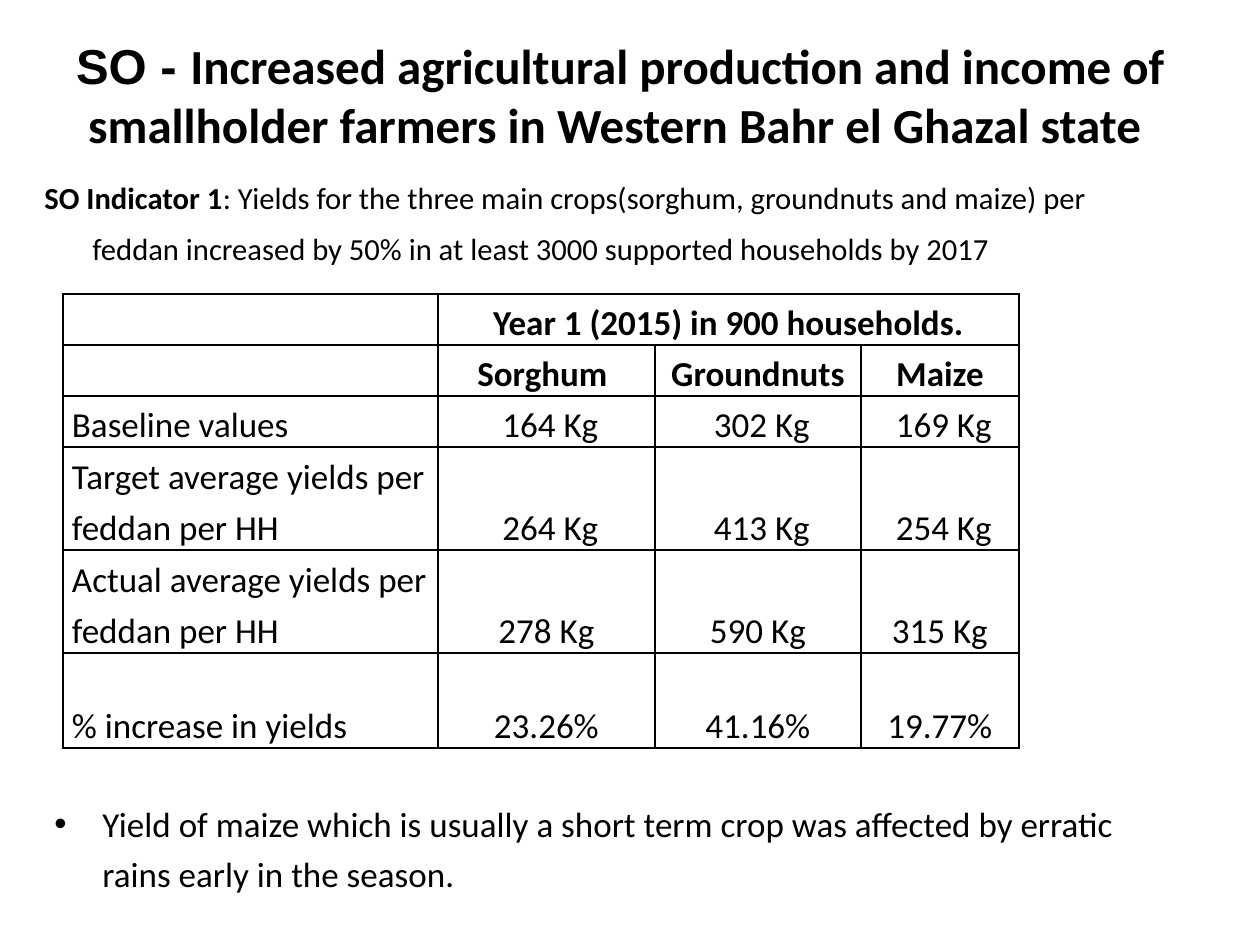
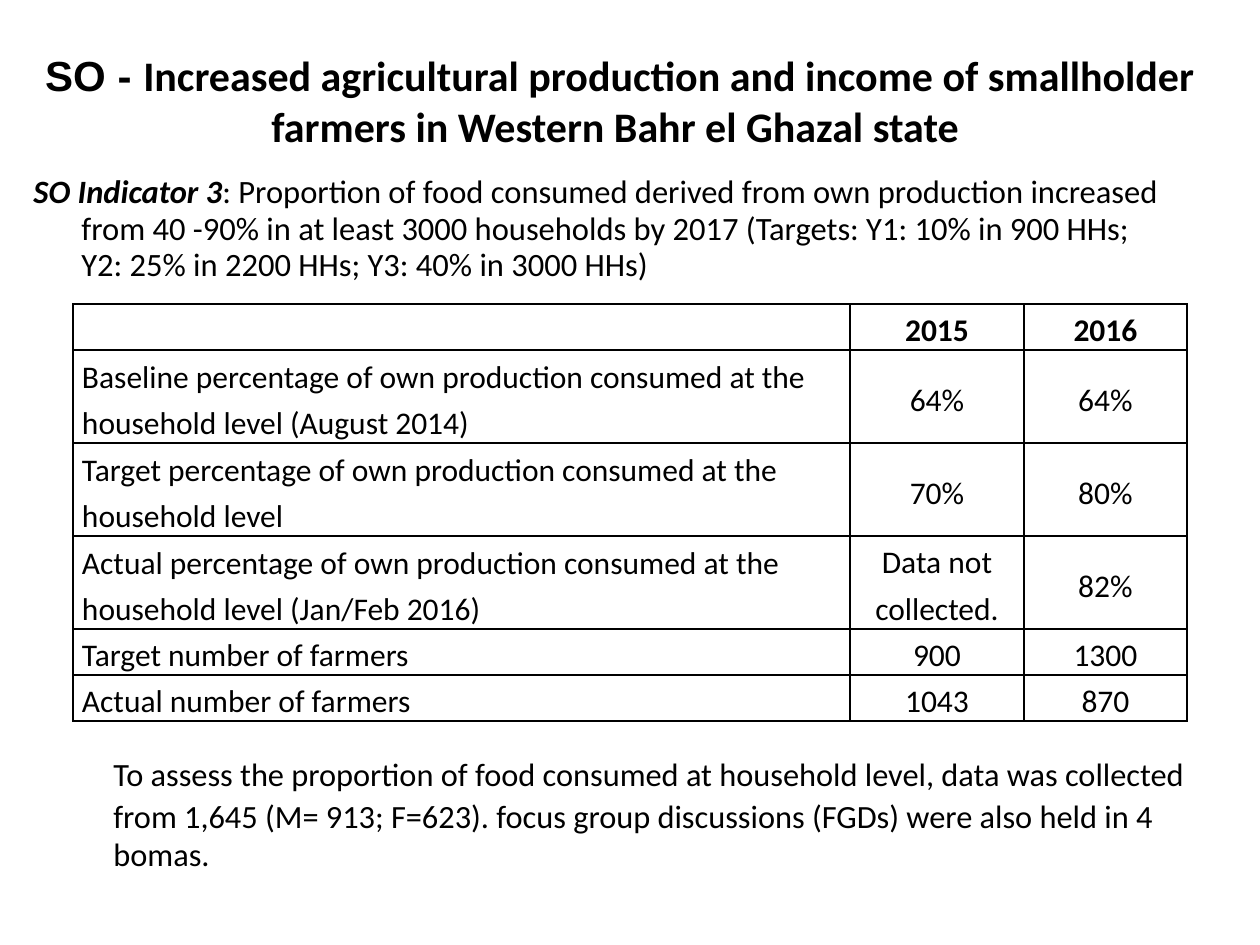
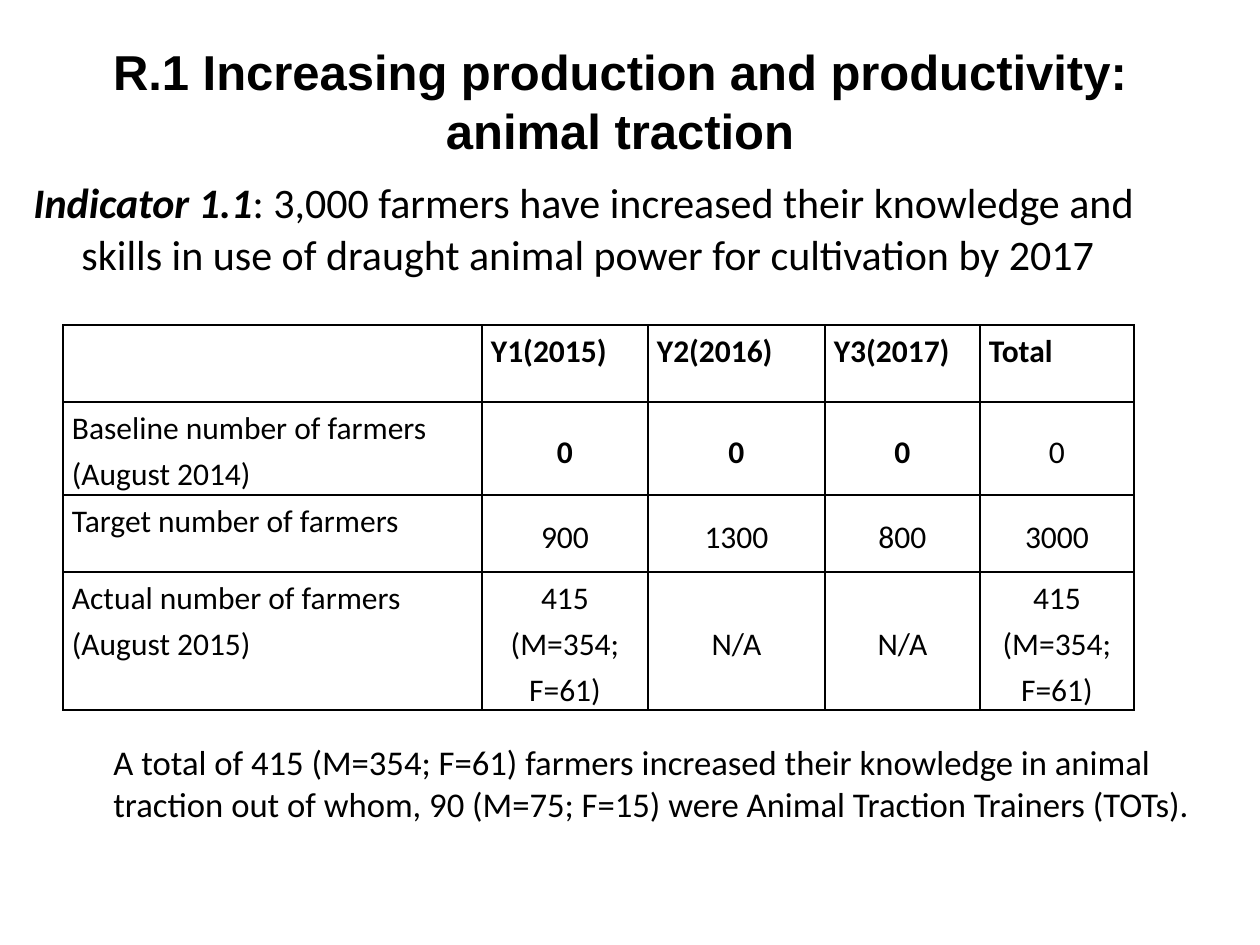
from dataclasses import dataclass

from lxml import etree
from pptx import Presentation
from pptx.dml.color import RGBColor
from pptx.enum.text import MSO_ANCHOR, MSO_AUTO_SIZE, PP_ALIGN
from pptx.oxml.ns import qn
from pptx.util import Emu, Pt

TOP, MID, LOW = MSO_ANCHOR.TOP, MSO_ANCHOR.MIDDLE, MSO_ANCHOR.BOTTOM
LEFT, CENTER = PP_ALIGN.LEFT, PP_ALIGN.CENTER
NO_FIT = MSO_AUTO_SIZE.NONE
TITLE_ONLY = 5


@dataclass(frozen=True)
class Theme:
    ink: str = "000000"
    paper: str = "FFFFFF"
    body: str = "Calibri"
    head: str = "Arial"
    title: float = 28
    small_title: float = 24
    large: float = 20
    cell: float = 18


THEME = Theme()
INDENT = 48
PAD = 9
SO_TITLE = [
    ("SO - ", {"name": THEME.head}),
    ("Increased agricultural production and income of smallholder farmers "
     "in Western Bahr el Ghazal state ", {}),
]


def px(n):
    return Emu(round(n * 914400 / 126))


def add_run(para, text, size, **style):
    run = para.add_run()
    run.text = text
    look = {"name": THEME.body, "size": Pt(size), "bold": False, "italic": False}
    for key, value in {**look, **style}.items():
        setattr(run.font, key, value)
    run.font.color.rgb = RGBColor.from_string(THEME.ink)


def add_slide(deck, runs, size, height):
    """Add a slide with its centred bold title; runs are (text, style) pairs."""
    slide = deck.slides.add_slide(deck.slide_layouts[TITLE_ONLY])
    slide.background.fill.solid()
    slide.background.fill.fore_color.rgb = RGBColor.from_string(THEME.paper)
    title = slide.shapes.title
    box = {"left": 32, "top": 42, "width": 1176, "height": height}
    for key, value in box.items():
        setattr(title, key, px(value))
    frame = title.text_frame
    frame.auto_size = NO_FIT
    frame.vertical_anchor = MID
    para = frame.paragraphs[0]
    para.alignment = CENTER
    for text, style in runs:
        add_run(para, text, size, bold=True, **style)
    return slide


def add_note(slide, box, runs, spacing=1.0, bullet=False):
    """Add a hanging paragraph; runs are (text, size, style) triples."""
    frame = slide.shapes.add_textbox(*map(px, box)).text_frame
    frame.word_wrap = True
    para = frame.paragraphs[0]
    para.line_spacing = spacing
    props = para._p.get_or_add_pPr()
    props.set("marL", str(px(INDENT)))
    props.set("indent", str(px(-INDENT)))
    if bullet:
        etree.SubElement(props, qn("a:buFont"), typeface=THEME.head)
        etree.SubElement(props, qn("a:buChar"), char="•")
    for text, size, style in runs:
        add_run(para, text, size, **style)


def add_lead(slide, box, label, text, size, spacing, italic=True):
    runs = [(label, size, {"bold": True, "italic": italic}), (text, size, {})]
    add_note(slide, box, runs, spacing)


def add_edges(cell):
    props = cell._tc.get_or_add_tcPr()
    for side in ("lnL", "lnR", "lnT", "lnB"):
        line = etree.SubElement(props, qn("a:" + side), w=str(Pt(1)))
        fill = etree.SubElement(line, qn("a:solidFill"))
        etree.SubElement(fill, qn("a:srgbClr"), val=THEME.ink)


def fill_cell(cell, text, size, bold, align, anchor):
    add_edges(cell)
    cell.fill.background()
    look = {"margin_left": px(PAD), "margin_right": px(PAD), "margin_top": 0,
            "margin_bottom": 0, "vertical_anchor": anchor}
    for key, value in look.items():
        setattr(cell, key, value)
    para = cell.text_frame.paragraphs[0]
    para.alignment = align
    para.line_spacing = 1.2
    if text:
        add_run(para, text, size, bold=bold)


def add_grid(slide, spot, cols, rows, data, size=THEME.cell, heads=1,
             head_align=CENTER, side=LOW, value=MID, strong=()):
    """Add a ruled table; side anchors heads and labels, value the figures.

    strong lists the (row, column) places that are bold besides the heads.
    """
    area = (*spot, sum(cols), sum(rows))
    table = slide.shapes.add_table(len(rows), len(cols), *map(px, area)).table
    table.first_row = table.horz_banding = False
    for col, width in zip(table.columns, cols):
        col.width = px(width)
    for row, height in zip(table.rows, rows):
        row.height = px(height)
    for r, line in enumerate(data):
        for c, text in enumerate(line):
            head = r < heads
            align = head_align if head else CENTER if c else LEFT
            anchor = side if head or c == 0 else value
            bold = head or (r, c) in strong
            fill_cell(table.cell(r, c), text, size, bold, align, anchor)
    return table


def yield_slide(deck):
    slide = add_slide(deck, SO_TITLE, THEME.title, 105)
    add_lead(
        slide, (32, 158, 1155, 126), "SO Indicator 1",
        ": Yields for the three main crops(sorghum, groundnuts and maize) per "
        "feddan increased by 50% in at least 3000 supported households by 2017",
        17.5, 1.4, italic=False)
    data = [
        ["", "Year 1 (2015) in 900 households.", "", ""],
        ["", "Sorghum ", "Groundnuts", "Maize"],
        ["Baseline values", " 164 Kg", " 302 Kg", " 169 Kg"],
        ["Target average yields per feddan per HH",
         " 264 Kg", " 413 Kg", " 254 Kg"],
        ["Actual average yields per feddan per HH",
         "278 Kg", "590 Kg", "315 Kg"],
        ["% increase in yields", "23.26%", "41.16%", "19.77%"],
    ]
    table = add_grid(slide, (63, 294), [375, 217, 206, 158],
                     [51, 51, 51, 103, 103, 95], data, size=THEME.large,
                     heads=2, value=LOW)
    table.cell(0, 1).merge(table.cell(0, 3))
    text = ("Yield of maize which is usually a short term crop was affected by "
            "erratic rains early in the season.")
    add_note(slide, (42, 788, 1155, 136), [(text, THEME.large, {})], 1.2, True)


def food_slide(deck):
    slide = add_slide(deck, SO_TITLE, THEME.small_title, 116)
    add_lead(
        slide, (21, 168, 1155, 126), "SO Indicator 3",
        ": Proportion of food consumed derived from own production increased "
        "from 40 -90% in at least 3000 households by 2017 (Targets: Y1: 10% in "
        "900 HHs; Y2: 25% in 2200 HHs; Y3: 40% in 3000 HHs)",
        18.6, 0.94)
    data = [
        ["", "2015", "2016"],
        ["Baseline percentage of own production consumed at the household "
         "level (August 2014)", "64%", "64%"],
        ["Target percentage of own production consumed at the household level",
         "70%", "80%"],
        ["Actual percentage of own production consumed at the household level "
         "(Jan/Feb 2016)", "Data not collected.", "82%"],
        ["Target number of farmers", "900", "1300"],
        ["Actual number of farmers", "1043", "870"],
    ]
    add_grid(slide, (73, 304), [777, 174, 163], [46, 93, 93, 93, 46, 46], data)
    text = ("To assess the proportion of food consumed at household level, data "
            "was collected from 1,645 (M= 913; F=623). focus group discussions "
            "(FGDs) were also held in 4 bomas.")
    add_note(slide, (53, 735, 1155, 147), [("\t", 25.9, {}), (text, 18.5, {})])


def traction_slide(deck):
    title = "R.1 Increasing production and productivity: animal traction"
    slide = add_slide(deck, [(title, {"name": THEME.head})], THEME.title, 116)
    add_lead(
        slide, (21, 168, 1155, 126), "Indicator 1.1",
        ": 3,000 farmers have increased their knowledge and skills in use of "
        "draught animal power for cultivation by 2017", 24, 1.04)
    tally = "415 (M=354; F=61)"
    data = [
        ["", "Y1(2015)", "Y2(2016)", "Y3(2017)", "Total"],
        ["Baseline number of farmers (August 2014)", "0", "0", "0", "0"],
        ["Target number of farmers", "900", "1300", "800", "3000"],
        ["Actual number of farmers (August 2015)", tally, "N/A", "N/A", tally],
    ]
    add_grid(slide, (63, 325), [419, 166, 177, 155, 154], [77, 93, 77, 138],
             data, head_align=LEFT, side=TOP,
             strong={(1, 1), (1, 2), (1, 3)})
    text = ("A total of 415 (M=354; F=61) farmers increased their knowledge in "
            "animal traction out of whom, 90 (M=75; F=15) were Animal Traction "
            "Trainers (TOTs).")
    add_note(slide, (53, 735, 1155, 147), [("\t", 15.4, {}), (text, 19.8, {})])


def main():
    deck = Presentation()
    deck.slide_width, deck.slide_height = px(1260), px(945)
    yield_slide(deck)
    food_slide(deck)
    traction_slide(deck)
    deck.save("out.pptx")


if __name__ == "__main__":
    main()
